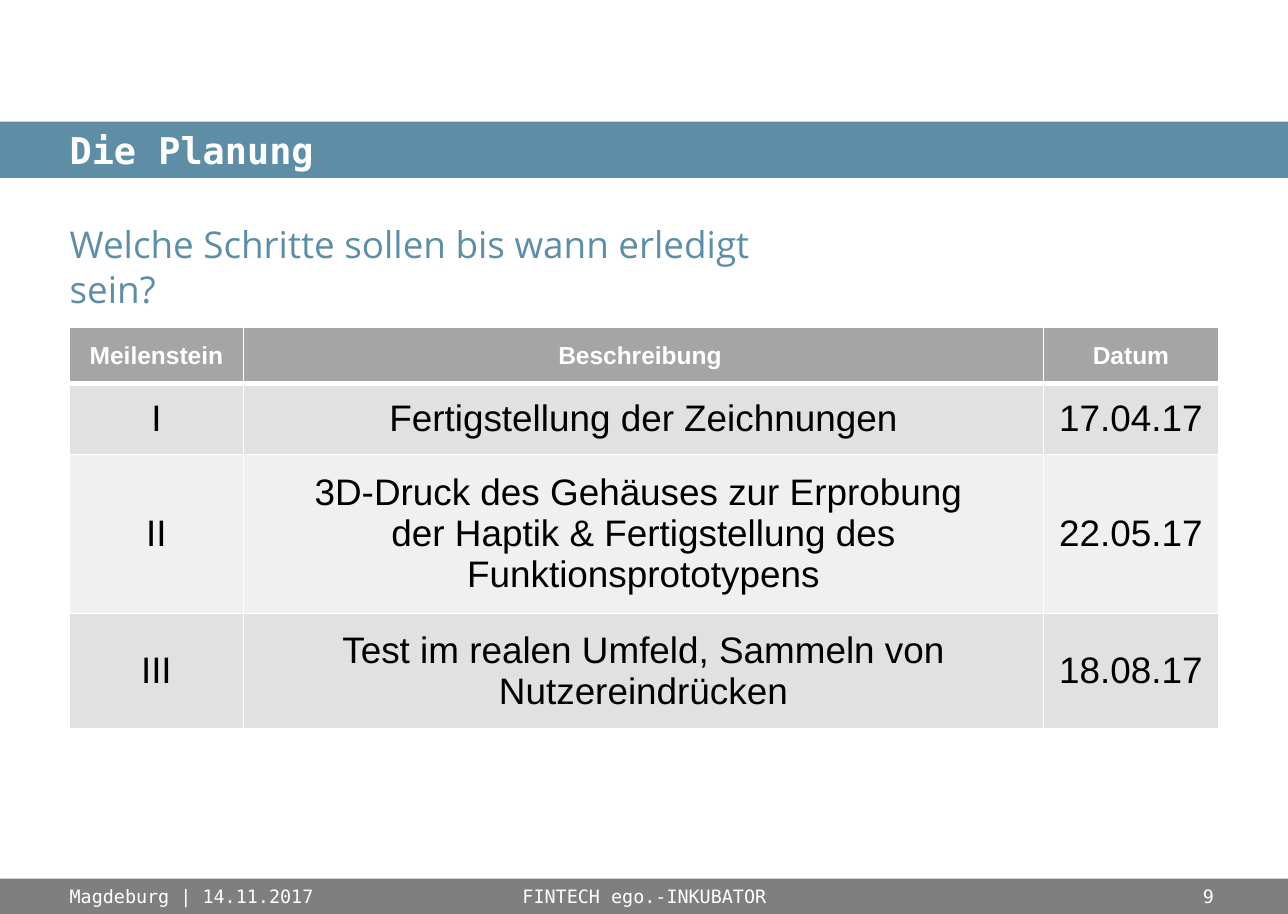
from dataclasses import dataclass

from lxml import etree
from pptx import Presentation
from pptx.dml.color import RGBColor
from pptx.enum.shapes import MSO_SHAPE
from pptx.enum.text import MSO_ANCHOR, PP_ALIGN
from pptx.oxml.ns import qn
from pptx.slide import Slide
from pptx.table import _Cell
from pptx.text.text import TextFrame
from pptx.util import Pt

RECTANGLE = MSO_SHAPE.RECTANGLE
TOP, MIDDLE = MSO_ANCHOR.TOP, MSO_ANCHOR.MIDDLE
LEFT, CENTER, RIGHT = PP_ALIGN.LEFT, PP_ALIGN.CENTER, PP_ALIGN.RIGHT


@dataclass(frozen=True)
class Theme:
    blue: str = "5D8EA6"
    footer_gray: str = "7F7F7F"
    header_gray: str = "A5A5A5"
    row_grays: tuple[str, str] = ("E1E1E1", "F0F0F0")
    white: str = "FFFFFF"
    black: str = "000000"
    mono: str = "DejaVu Sans Mono"
    sans: str = "Open Sans"
    table_font: str = "Arial"
    large: int = 24
    header: int = 16
    small: int = 12


THEME = Theme()


@dataclass(frozen=True)
class Area:
    left: float
    top: float
    width: float
    height: float

    def lengths(self) -> tuple[Pt, Pt, Pt, Pt]:
        return Pt(self.left), Pt(self.top), Pt(self.width), Pt(self.height)


@dataclass(frozen=True)
class Style:
    font: str
    size: int
    color: str
    bold: bool = False
    align: PP_ALIGN = LEFT


@dataclass(frozen=True)
class Label:
    text: str
    area: Area
    style: Style
    anchor: MSO_ANCHOR = MIDDLE


PAGE_WIDTH, PAGE_HEIGHT = 838.8, 595.44
MARGIN = 45.36
FOOTER_TOP, FOOTER_HEIGHT = 572.4, 23.04
CELL_MARGIN = 8.64
ROW_HEIGHT = 29.52
COLUMN_WIDTHS = (113.04, 521.28, 113.76)
THIN, THICK = 1, 3

TITLE_BAND = Area(0, 79.2, PAGE_WIDTH, 36.72)
FOOTER_BAND = Area(0, FOOTER_TOP, PAGE_WIDTH, FOOTER_HEIGHT)
TABLE_AREA = Area(MARGIN, 213.4, sum(COLUMN_WIDTHS), 4 * ROW_HEIGHT)


def footer_label(text: str, left: float, width: float, align: PP_ALIGN) -> Label:
    style = Style(THEME.mono, THEME.small, THEME.white, align=align)
    return Label(text, Area(left, FOOTER_TOP, width, FOOTER_HEIGHT), style)


LABELS = (
    Label("Welche Schritte sollen bis wann erledigt sein?",
          Area(MARGIN, 144.72, 493.2, 28.8),
          Style(THEME.sans, THEME.large, THEME.blue), TOP),
    Label("Die Planung",
          Area(MARGIN, TITLE_BAND.top, PAGE_WIDTH - MARGIN, TITLE_BAND.height),
          Style(THEME.mono, THEME.large, THEME.white, bold=True)),
    footer_label("Magdeburg | 14.11.2017", MARGIN, 195.12, LEFT),
    footer_label("FINTECH ego.-INKUBATOR", 306.72, 226.08, CENTER),
    footer_label("9", 734.4, 56.16, RIGHT),
)

MILESTONES = (
    ("Meilenstein", "Beschreibung ", "Datum"),
    ("I", "Fertigstellung der Zeichnungen", "17.04.17"),
    ("II", "3D-Druck des Gehäuses zur Erprobung \n"
           "der Haptik & Fertigstellung des Funktionsprototypens", "22.05.17"),
    ("III", "Test im realen Umfeld, Sammeln von Nutzereindrücken", "18.08.17"),
)
HEADER_STYLE = Style(THEME.table_font, THEME.header, THEME.white, True, CENTER)
BODY_STYLE = Style(THEME.table_font, THEME.large, THEME.black, False, CENTER)


def write_text(frame: TextFrame, text: str, style: Style) -> None:
    para = frame.paragraphs[0]
    para.text = text
    para.alignment = style.align
    para.font.name = style.font
    para.font.size = Pt(style.size)
    para.font.bold = style.bold
    para.font.color.rgb = RGBColor.from_string(style.color)


def draw_band(page: Slide, area: Area, color: str) -> None:
    band = page.shapes.add_shape(RECTANGLE, *area.lengths())
    band.shadow.inherit = False
    band.fill.solid()
    band.fill.fore_color.rgb = RGBColor.from_string(color)
    band.line.fill.background()


def draw_label(page: Slide, label: Label) -> None:
    frame = page.shapes.add_textbox(*label.area.lengths()).text_frame
    frame.word_wrap = True
    frame.vertical_anchor = label.anchor
    frame.margin_left = frame.margin_right = Pt(0)
    frame.margin_top = frame.margin_bottom = Pt(0)
    write_text(frame, label.text, label.style)


def draw_border(cell: _Cell, side: str, width: float) -> None:
    properties = cell._tc.get_or_add_tcPr()
    line = etree.SubElement(properties, qn(f"a:ln{side}"), w=str(Pt(width)))
    fill = etree.SubElement(line, qn("a:solidFill"))
    etree.SubElement(fill, qn("a:srgbClr"), val=THEME.white)


def draw_cell(cell: _Cell, text: str, row: int) -> None:
    is_header = row == 0
    cell.vertical_anchor = MIDDLE
    cell.margin_left = cell.margin_right = Pt(CELL_MARGIN)
    cell.margin_top = cell.margin_bottom = Pt(CELL_MARGIN)
    write_text(cell.text_frame, text, HEADER_STYLE if is_header else BODY_STYLE)
    widths = {"L": THIN, "R": THIN,
              "T": THICK if row == 1 else THIN,
              "B": THICK if is_header else THIN}
    for side, width in widths.items():
        draw_border(cell, side, width)
    color = THEME.header_gray if is_header else THEME.row_grays[(row - 1) % 2]
    cell.fill.solid()
    cell.fill.fore_color.rgb = RGBColor.from_string(color)


def draw_milestones(page: Slide) -> None:
    table = page.shapes.add_table(
        len(MILESTONES), len(COLUMN_WIDTHS), *TABLE_AREA.lengths()).table
    table.first_row = table.horz_banding = False
    for column, width in zip(table.columns, COLUMN_WIDTHS):
        column.width = Pt(width)
    for row, texts in enumerate(MILESTONES):
        table.rows[row].height = Pt(ROW_HEIGHT)
        for column, text in enumerate(texts):
            draw_cell(table.cell(row, column), text, row)


def main() -> None:
    deck = Presentation()
    deck.slide_width, deck.slide_height = Pt(PAGE_WIDTH), Pt(PAGE_HEIGHT)
    page = deck.slides.add_slide(deck.slide_layouts[6])
    draw_band(page, FOOTER_BAND, THEME.footer_gray)
    draw_band(page, TITLE_BAND, THEME.blue)
    for label in LABELS:
        draw_label(page, label)
    draw_milestones(page)
    deck.save("out.pptx")


if __name__ == "__main__":
    main()
